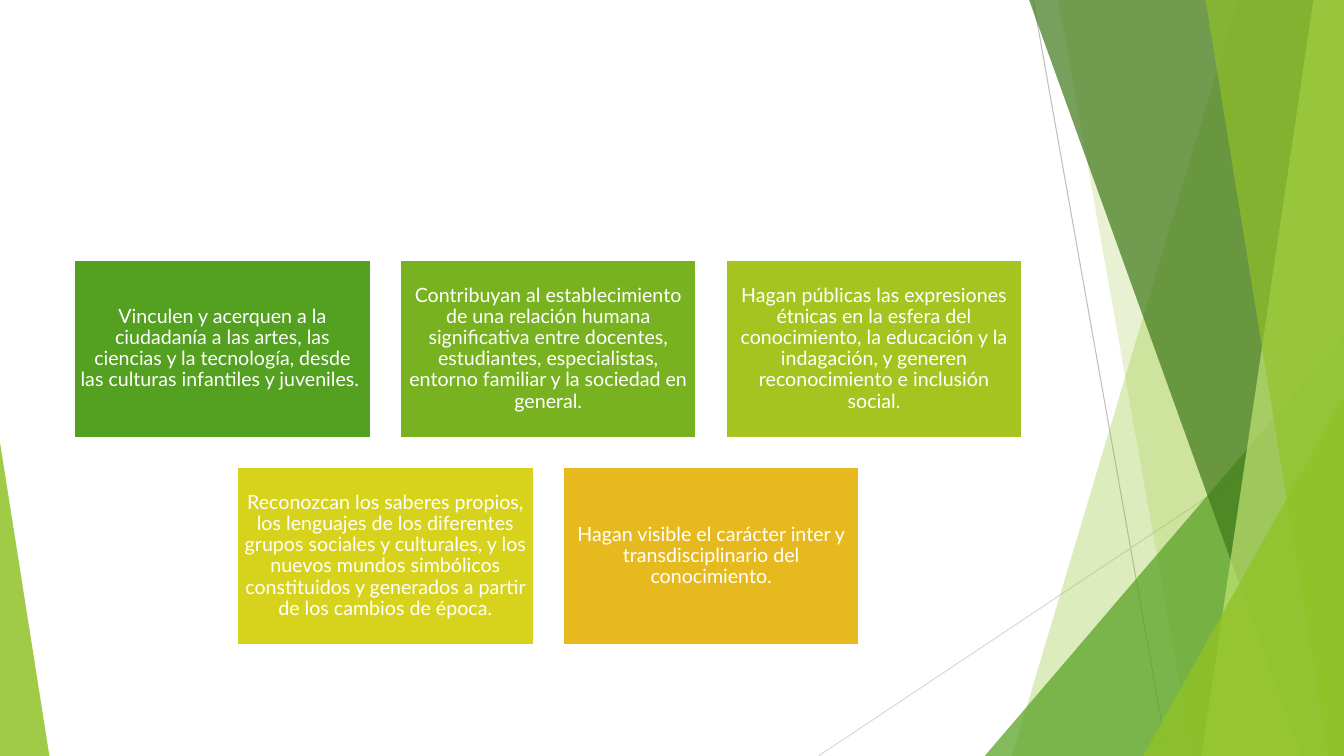
from lxml import etree
from pptx import Presentation
from pptx.dml.color import RGBColor
from pptx.enum.shapes import MSO_CONNECTOR, MSO_SHAPE
from pptx.enum.text import MSO_ANCHOR, PP_ALIGN
from pptx.oxml.ns import qn
from pptx.util import Pt

RECT = MSO_SHAPE.RECTANGLE
PEAK = MSO_SHAPE.ISOSCELES_TRIANGLE
LINE = MSO_CONNECTOR.STRAIGHT
MIDDLE = MSO_ANCHOR.MIDDLE
CENTER = PP_ALIGN.CENTER

WHITE = RGBColor(0xFF, 0xFF, 0xFF)
GRAY = RGBColor(0xBF, 0xBF, 0xBF)
PALE = RGBColor(0xD9, 0xD9, 0xD9)
LIME = RGBColor(0x90, 0xC2, 0x26)
LIGHT = RGBColor(0xC0, 0xE4, 0x74)
GREEN = RGBColor(0x54, 0xA0, 0x21)
DARK = RGBColor(0x3F, 0x78, 0x19)
LEAF = RGBColor(0x79, 0xB2, 0x20)
OLIVE = RGBColor(0xA5, 0xC4, 0x1F)
YELLOW = RGBColor(0xD7, 0xD3, 0x1D)
AMBER = RGBColor(0xE6, 0xB9, 0x1E)

WIDE, HIGH = 960, 540
MID, TOP = 391.7, 185.6
BOX_W, BOX_H, GAP = 211.7, 127, 21

ROWS = [
    [
        (GREEN, "Vinculen y acerquen a la ciudadanía a las artes, las ciencias "
                "y la tecnología, desde las culturas infantiles y juveniles. "),
        (LEAF, "Contribuyan al establecimiento de una relación humana "
               "significativa entre docentes, estudiantes, especialistas, "
               "entorno familiar y la sociedad en general."),
        (OLIVE, "Hagan públicas las expresiones étnicas en la esfera del "
                "conocimiento, la educación y la indagación, y generen "
                "reconocimiento e inclusión social."),
    ],
    [
        (YELLOW, "Reconozcan los saberes propios, los lenguajes de los "
                 "diferentes grupos sociales y culturales, y los nuevos mundos "
                 "simbólicos constituidos y generados a partir de los cambios "
                 "de época."),
        (AMBER, "Hagan visible el carácter inter y transdisciplinario del "
                "conocimiento."),
    ],
]

FRAME = {
    "word_wrap": True, "vertical_anchor": MIDDLE,
    "margin_left": Pt(4.4), "margin_right": Pt(4.4),
    "margin_top": Pt(4.4), "margin_bottom": Pt(4.4),
}
PARA = {"alignment": CENTER, "line_spacing": 0.9}
FONT = {"name": "Lato", "size": Pt(14)}


def apply(target, values):
    for name, value in values.items():
        setattr(target, name, value)


def paint(shape, color, alpha):
    """Fill without outline or shadow; alpha is the opacity in percent."""
    shape.shadow.inherit = False
    shape.fill.solid()
    shape.fill.fore_color.rgb = color
    shape.line.fill.background()
    tint = shape.element.spPr.find(qn("a:solidFill"))[0]
    etree.SubElement(tint, qn("a:alpha")).set("val", str(alpha * 1000))


def add_line(shapes, start, end, color):
    line = shapes.add_connector(LINE, *map(Pt, start + end))
    line.line.color.rgb = color
    line.line.width = Pt(0.75)
    etree.SubElement(line.element.spPr, qn("a:effectLst"))


def add_facet(shapes, top, base, color, alpha):
    """Full-height band from a slanted left side to the right slide edge."""
    form = shapes.build_freeform(Pt(top), 0)
    corners = [(WIDE, 0), (WIDE, HIGH), (base, HIGH)]
    form.add_line_segments([(Pt(x), Pt(y)) for x, y in corners])
    paint(form.convert_to_shape(), color, alpha)


def add_wedge(shapes, left, top, width, apex, color, alpha):
    """Triangle on the bottom edge; apex 0 is at the left, 1 at the right."""
    wedge = shapes.add_shape(PEAK, Pt(left), Pt(top), Pt(width), Pt(HIGH - top))
    wedge.adjustments[0] = apex
    paint(wedge, color, alpha)


def add_box(shapes, left, top, color, text):
    box = shapes.add_shape(RECT, Pt(left), Pt(top), Pt(BOX_W), Pt(BOX_H))
    box.shadow.inherit = False
    box.fill.solid()
    box.fill.fore_color.rgb = color
    box.line.color.rgb = WHITE
    box.line.width = Pt(1.5)
    frame = box.text_frame
    apply(frame, FRAME)
    para = frame.paragraphs[0]
    apply(para, PARA)
    run = para.add_run()
    run.text = text
    apply(run.font, FONT)
    run.font.color.rgb = WHITE


def add_row(shapes, top, items):
    """Boxes at equal gaps, centred on MID."""
    step = BOX_W + GAP
    left = MID - (len(items) * step - GAP) / 2
    for i, (color, text) in enumerate(items):
        add_box(shapes, left + i * step, top, color, text)


def main():
    deck = Presentation()
    deck.slide_width, deck.slide_height = Pt(WIDE), Pt(HIGH)
    shapes = deck.slides.add_slide(deck.slide_layouts[6]).shapes

    add_line(shapes, (738, 0), (834, HIGH), GRAY)
    add_line(shapes, (WIDE, 290), (584.6, HIGH), PALE)
    add_facet(shapes, 884.2, 722.9, LIME, 30)
    add_facet(shapes, 756, 851.8, LIME, 20)
    add_wedge(shapes, 703.4, 240, 256.6, 1, GREEN, 72)
    add_facet(shapes, 735.1, 929.5, DARK, 70)
    add_facet(shapes, 938.2, 858.2, LIGHT, 70)
    add_facet(shapes, 861.1, 949, LIME, 65)
    add_wedge(shapes, 816.5, 283, 143.5, 1, LIME, 80)
    add_wedge(shapes, 0, 316, 35.3, 0, LIME, 85)

    for i, items in enumerate(ROWS):
        add_row(shapes, TOP + i * (BOX_H + GAP), items)
    deck.save("out.pptx")


if __name__ == "__main__":
    main()
